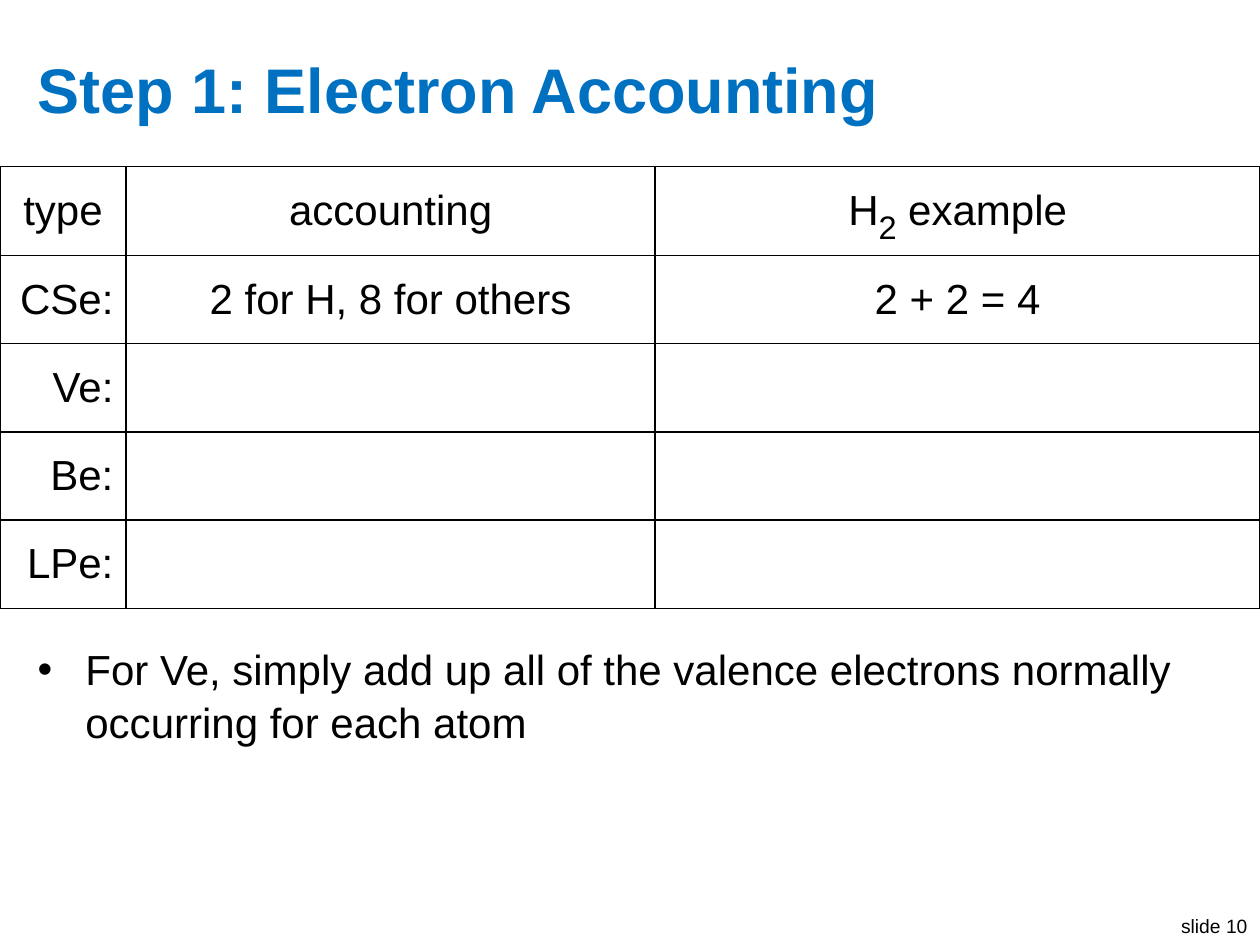
from lxml.etree import SubElement
from pptx import Presentation
from pptx.dml.color import RGBColor
from pptx.enum.text import MSO_ANCHOR, PP_ALIGN
from pptx.oxml.ns import qn
from pptx.util import Inches, Pt

BLACK, BLUE, WHITE = "000000", "0070C0", "FFFFFF"

presentation = Presentation()
presentation.slide_width, presentation.slide_height = Inches(10), Inches(7.5)
slide = presentation.slides.add_slide(presentation.slide_layouts[6])
margin = 0.2
content_width = 10 - 2 * margin


def add_run(paragraph, text, size=24, color=BLACK, bold=False):
    run = paragraph.add_run()
    run.text = text
    run.font.name = "Arial"
    run.font.size = Pt(size)
    run.font.bold = bold
    run.font.color.rgb = RGBColor.from_string(color)
    return run


def add_text_frame(left, top, width, height, wrap=True):
    box = slide.shapes.add_textbox(Inches(left), Inches(top), Inches(width), Inches(height))
    box.text_frame.word_wrap = wrap
    return box.text_frame


# Slide number
number_frame = add_text_frame(9.25, 7.21, 0.75, 0.29, wrap=False)
number_frame.paragraphs[0].alignment = PP_ALIGN.RIGHT
add_run(number_frame.paragraphs[0], "slide 10", 11)

# Title
title_frame = add_text_frame(margin, 0.3, content_width, 0.8)
title_frame.vertical_anchor = MSO_ANCHOR.MIDDLE
add_run(title_frame.paragraphs[0], "Step 1: Electron Accounting", 36, BLUE, bold=True)

# Bullet below the table
body_frame = add_text_frame(margin, 5.04, content_width, 2.22)
bullet = body_frame.paragraphs[0]
bullet.line_spacing = 1.05
properties = bullet._p.get_or_add_pPr()
properties.set("marL", str(Inches(0.38)))
properties.set("indent", str(-Inches(0.38)))
SubElement(properties, qn("a:buFont"), typeface="Arial")
SubElement(properties, qn("a:buChar"), char="•")
add_run(bullet, "For Ve, simply add up all of the valence electrons normally occurring for each atom")

# Accounting table: each cell is a list of runs
rows = [
    [["type"], ["accounting"], ["H", "2", " example"]],
    [["CSe:"], ["2 for H, 8 for others"], ["2 + 2 = 4"]],
    [["Ve:"], [], []],
    [["Be:"], [], []],
    [["LPe:"], [], []],
]
column_widths = [1, 4.2, 4.8]
row_height = 0.7
table = slide.shapes.add_table(
    len(rows), len(column_widths), 0, Inches(1.32),
    Inches(sum(column_widths)), Inches(row_height * len(rows)),
).table
for column, width in zip(table.columns, column_widths):
    column.width = Inches(width)

for row_index, row in enumerate(rows):
    table.rows[row_index].height = Inches(row_height)
    for column_index, texts in enumerate(row):
        cell = table.cell(row_index, column_index)
        cell.vertical_anchor = MSO_ANCHOR.MIDDLE

        # Borders come before the fill in the cell properties
        cell_properties = cell._tc.get_or_add_tcPr()
        for side in ("a:lnL", "a:lnR", "a:lnT", "a:lnB"):
            line = SubElement(cell_properties, qn(side), w=str(Pt(1)))
            SubElement(SubElement(line, qn("a:solidFill")), qn("a:srgbClr"), val=BLACK)
        cell.fill.solid()
        cell.fill.fore_color.rgb = RGBColor.from_string(WHITE)

        # Row labels are right-aligned, everything else is centred
        paragraph = cell.text_frame.paragraphs[0]
        is_label = column_index == 0 and row_index > 0
        paragraph.alignment = PP_ALIGN.RIGHT if is_label else PP_ALIGN.CENTER
        for text in texts:
            if text == "2":
                subscript = add_run(paragraph, text, 32)
                subscript.font._element.set("baseline", "-25000")
            else:
                add_run(paragraph, text)

presentation.save("out.pptx")
